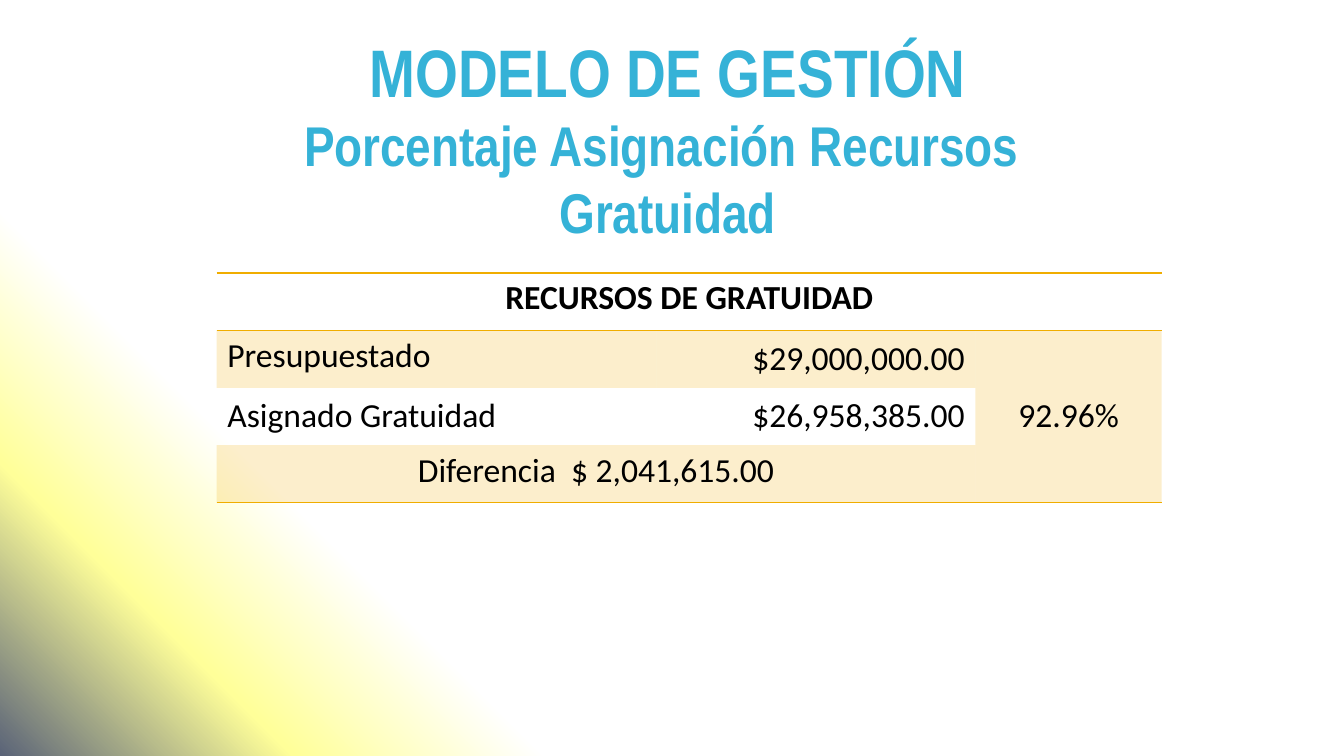
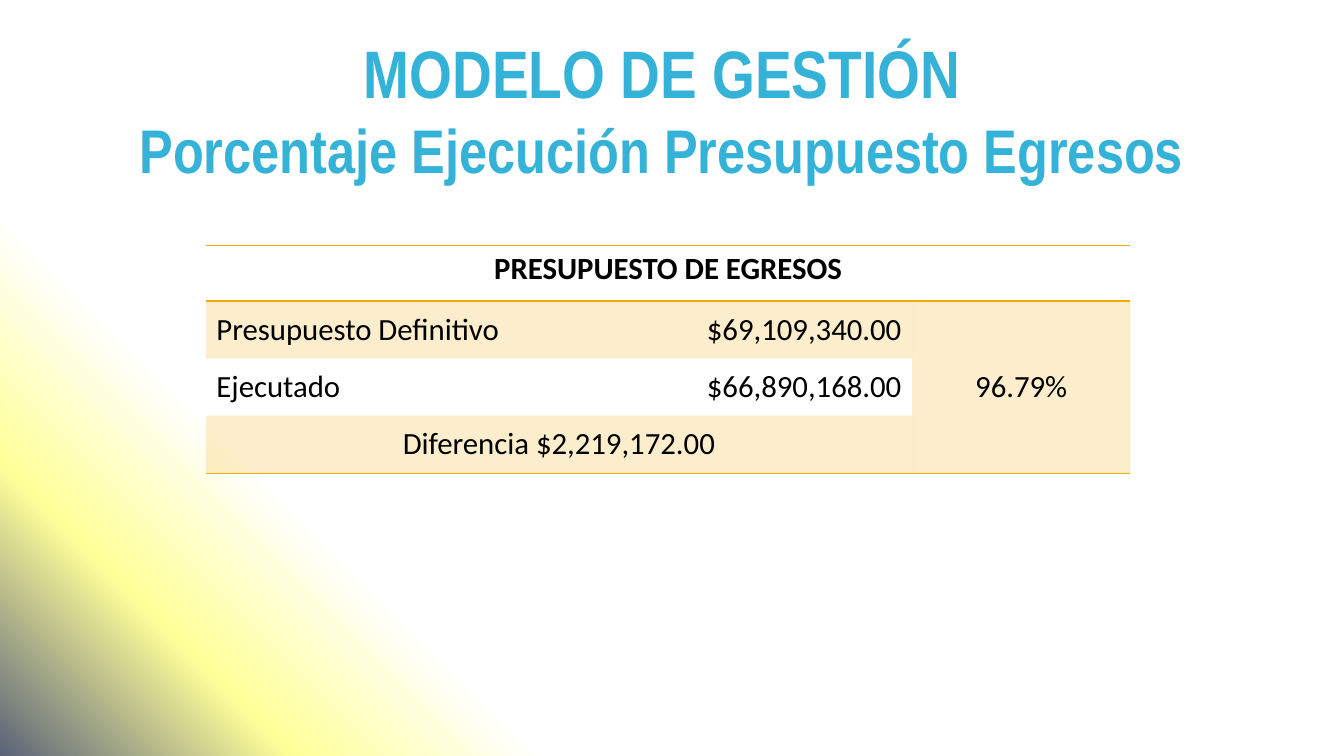
from dataclasses import dataclass

from lxml import etree
from pptx import Presentation
from pptx.dml.color import RGBColor
from pptx.enum.text import MSO_ANCHOR, PP_ALIGN
from pptx.oxml.ns import qn
from pptx.util import Pt

LEFT, CENTER, RIGHT = PP_ALIGN.LEFT, PP_ALIGN.CENTER, PP_ALIGN.RIGHT
TOP, MIDDLE = MSO_ANCHOR.TOP, MSO_ANCHOR.MIDDLE

WHITE = RGBColor(0xFF, 0xFF, 0xFF)
PALE_YELLOW = RGBColor(0xFF, 0xFF, 0x99)
SLATE = RGBColor(0x5A, 0x63, 0x78)
SKY = RGBColor(0x35, 0xB2, 0xD7)
GOLD = RGBColor(0xF0, 0xAD, 0x00)
BLACK = RGBColor(0, 0, 0)

BACKGROUND_STOPS = ((74, WHITE), (86, PALE_YELLOW), (100, SLATE))
TITLE_FONT, TABLE_FONT = "Arial Narrow", "Calibri"
HEADING, HEADING_SIZE = "MODELO DE GESTIÓN", 48
BAND_OPACITY = 20
PLAIN_TABLE_STYLE = "{2D5ABB26-0587-4C30-8999-92F81FD0307C}"


@dataclass(frozen=True)
class Entry:
    row: int
    column: int
    text: str
    align: PP_ALIGN
    anchor: MSO_ANCHOR = MIDDLE
    bold: bool = False
    shaded: bool = False
    rows: int = 1
    columns: int = 1


@dataclass(frozen=True)
class BudgetSlide:
    title_box: tuple[float, float, float, float]
    subtitle: tuple[str, ...]
    subtitle_size: int
    table_origin: tuple[float, float]
    column_widths: tuple[float, ...]
    row_heights: tuple[float, ...]
    table_size: int
    entries: tuple[Entry, ...]


def budget_entries(header: str, planned: tuple[str, str], spent: tuple[str, str],
                   share: str, difference: str, label_anchor: MSO_ANCHOR) -> tuple[Entry, ...]:
    return (
        Entry(0, 0, header, CENTER, TOP, bold=True, columns=3),
        Entry(1, 0, planned[0], LEFT, label_anchor, shaded=True),
        Entry(1, 1, planned[1], RIGHT, shaded=True),
        Entry(1, 2, share, CENTER, shaded=True, rows=3),
        Entry(2, 0, spent[0], LEFT),
        Entry(2, 1, spent[1], RIGHT),
        Entry(3, 0, difference, CENTER, label_anchor, shaded=True, columns=2),
    )


SLIDES = (
    BudgetSlide(
        (69, 45.4, 816, 105.8), ("Porcentaje Asignación Recursos ", "Gratuidad"), 40,
        (154.8, 195), (314, 228, 133), (41, 41, 41, 41), 24,
        budget_entries("RECURSOS DE GRATUIDAD", ("Presupuestado", "$29,000,000.00"),
                       ("Asignado Gratuidad", "$26,958,385.00"), "92.96%",
                       "Diferencia  $ 2,041,615.00", TOP),
    ),
    BudgetSlide(
        (65, 29.5, 816, 96.5), ("Porcentaje Ejecución Presupuesto Egresos",), 44,
        (147, 175.5), (259, 245.5, 156), (39.5, 41, 41, 41), 22,
        budget_entries("PRESUPUESTO DE EGRESOS", ("Presupuesto Definitivo", "$69,109,340.00"),
                       ("Ejecutado", "$66,890,168.00"), "96.79%",
                       "Diferencia $2,219,172.00", MIDDLE),
    ),
)


def write(paragraph, text: str, *, font: str, size: float, color: RGBColor,
          bold: bool = False, align: PP_ALIGN = LEFT) -> None:
    paragraph.alignment = align
    run = paragraph.add_run()
    run.text = text
    run.font.name = font
    run.font.size = Pt(size)
    run.font.bold = bold
    run.font.color.rgb = color


def paint_background(master) -> None:
    fill = master.background.fill
    fill.gradient()
    fill.gradient_angle = 225
    stops = next(master.element.iter(qn("a:gsLst")))
    for stop in list(stops):
        stops.remove(stop)
    for position, color in BACKGROUND_STOPS:
        stop = etree.SubElement(stops, qn("a:gs"), pos=str(position * 1000))
        etree.SubElement(stop, qn("a:srgbClr"), val=str(color))


def add_title(slide, content: BudgetSlide) -> None:
    frame = slide.shapes.add_textbox(*map(Pt, content.title_box)).text_frame
    frame.word_wrap = True
    frame.vertical_anchor = MIDDLE
    paragraph = frame.paragraphs[0]
    write(paragraph, HEADING, font=TITLE_FONT, size=HEADING_SIZE, color=SKY,
          bold=True, align=CENTER)
    for line in content.subtitle:
        paragraph.add_line_break()
        write(paragraph, line, font=TITLE_FONT, size=content.subtitle_size, color=SKY,
              bold=True, align=CENTER)


def add_border(cell, edge: str) -> None:
    properties = cell._tc.get_or_add_tcPr()
    line = etree.SubElement(properties, qn(f"a:{edge}"), w=str(Pt(1)))
    fill = etree.SubElement(line, qn("a:solidFill"))
    etree.SubElement(fill, qn("a:srgbClr"), val=str(GOLD))


def shade(cell) -> None:
    cell.fill.solid()
    cell.fill.fore_color.rgb = GOLD
    color = cell._tc.tcPr.find(f"{qn('a:solidFill')}/{qn('a:srgbClr')}")
    etree.SubElement(color, qn("a:alpha"), val=str(BAND_OPACITY * 1000))


def add_budget_table(slide, content: BudgetSlide) -> None:
    widths, heights = content.column_widths, content.row_heights
    table_frame = slide.shapes.add_table(
        len(heights), len(widths), *map(Pt, content.table_origin),
        Pt(sum(widths)), Pt(sum(heights)))
    table = table_frame.table
    table.first_row = table.horz_banding = False
    next(table_frame._element.iter(qn("a:tableStyleId"))).text = PLAIN_TABLE_STYLE
    for column, width in zip(table.columns, widths):
        column.width = Pt(width)
    for row, height in zip(table.rows, heights):
        row.height = Pt(height)

    last_row = len(heights) - 1
    for column in range(len(widths)):
        add_border(table.cell(0, column), "lnT")
        add_border(table.cell(0, column), "lnB")
        add_border(table.cell(last_row, column), "lnB")

    for entry in content.entries:
        cell = table.cell(entry.row, entry.column)
        if entry.rows > 1:
            add_border(cell, "lnB")
        if entry.rows * entry.columns > 1:
            cell.merge(table.cell(entry.row + entry.rows - 1,
                                  entry.column + entry.columns - 1))
        cell.vertical_anchor = entry.anchor
        cell.margin_left = cell.margin_right = Pt(7.6)
        cell.margin_top = cell.margin_bottom = Pt(3.6)
        if entry.shaded:
            shade(cell)
        else:
            cell.fill.background()
        write(cell.text_frame.paragraphs[0], entry.text, font=TABLE_FONT,
              size=content.table_size, color=BLACK, bold=entry.bold, align=entry.align)


def main() -> None:
    presentation = Presentation()
    presentation.slide_width, presentation.slide_height = Pt(960), Pt(540)
    paint_background(presentation.slide_master)
    blank_layout = presentation.slide_layouts[6]
    for content in SLIDES:
        slide = presentation.slides.add_slide(blank_layout)
        add_title(slide, content)
        add_budget_table(slide, content)
    presentation.save("out.pptx")


if __name__ == "__main__":
    main()
